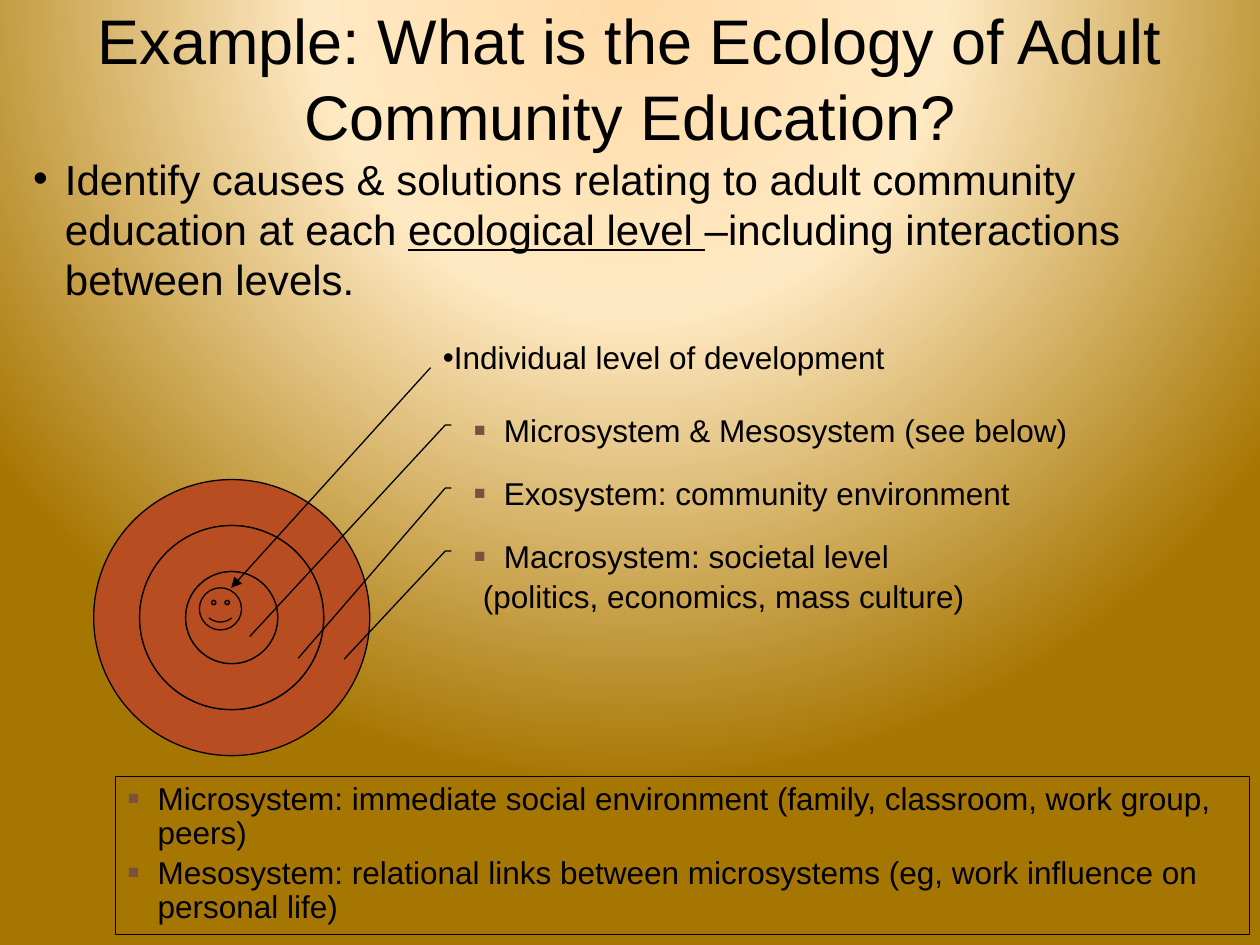
from dataclasses import dataclass

from pptx import Presentation
from pptx import util as u
from pptx.dml.color import RGBColor
from pptx.enum import shapes, text
from pptx.oxml import parse_xml
from pptx.oxml.ns import nsdecls, qn

Cm, Pt = u.Cm, u.Pt
SHAPE = shapes.MSO_SHAPE


@dataclass(frozen=True)
class Theme:
    """Colours, type sizes and line width of the slide."""
    font: str = "Arial"
    ink: str = "000000"
    ring: str = "B74D21"
    bullet: str = "785140"
    glow: tuple = ((0, "FFDBA9"), (40, "FFE9C2"), (100, "A67602"))
    title: int = 36
    body: int = 24
    label: int = 18
    line: float = 0.75


THEME = Theme()


def paint_background(slide):
    """Fill the background with a circular gradient."""
    stops = "".join(
        f'<a:gs pos="{place * 1000}"><a:srgbClr val="{colour}"/></a:gs>'
        for place, colour in THEME.glow)
    slide.element.cSld.insert(0, parse_xml(
        f'<p:bg {nsdecls("p", "a")}><p:bgPr><a:gradFill rotWithShape="1">'
        f'<a:gsLst>{stops}</a:gsLst><a:path path="circle">'
        '<a:fillToRect l="50000" t="-80000" r="50000" b="180000"/></a:path>'
        '</a:gradFill><a:effectLst/></p:bgPr></p:bg>'))


def add_bullet(paragraph, character, indent, colour=THEME.ink, percent=100):
    """Give a paragraph a bullet with a hanging indent."""
    properties = paragraph._p.get_or_add_pPr()
    properties.set("marL", str(indent))
    properties.set("indent", str(-indent))
    for markup in (f'<a:buClr {nsdecls("a")}><a:srgbClr val="{colour}"/></a:buClr>',
                   f'<a:buSzPct {nsdecls("a")} val="{percent * 1000}"/>',
                   f'<a:buFont {nsdecls("a")} typeface="{THEME.font}"/>',
                   f'<a:buChar {nsdecls("a")} char="{character}"/>'):
        properties.append(parse_xml(markup))


def add_run(paragraph, words, size, underline=None):
    """Add one run in the slide font."""
    run = paragraph.add_run()
    run.text = words
    run.font.name = THEME.font
    run.font.size = Pt(size)
    run.font.color.rgb = RGBColor.from_string(THEME.ink)
    run.font.underline = underline


def add_text_box(slide, left, top, width, height):
    """Add a wrapping text box and return its frame."""
    frame = slide.shapes.add_textbox(Cm(left), Cm(top), Cm(width), Cm(height)).text_frame
    frame.word_wrap = True
    return frame


def add_outline(parent, kind, left, top, width, height, fill=None, adjustments=()):
    """Add a thin-lined preset shape, filled or hollow."""
    shape = parent.shapes.add_shape(kind, Cm(left), Cm(top), Cm(width), Cm(height))
    shape.shadow.inherit = False
    if fill:
        shape.fill.solid()
        shape.fill.fore_color.rgb = RGBColor.from_string(fill)
    else:
        shape.fill.background()
    shape.line.color.rgb = RGBColor.from_string(THEME.ink)
    shape.line.width = Pt(THEME.line)
    for index, value in enumerate(adjustments):
        shape.adjustments[index] = value
    return shape


def write_labels(shape, lines, wrap):
    """Write (words, bulleted) label paragraphs into a shape."""
    frame = shape.text_frame
    frame.word_wrap = wrap
    frame.vertical_anchor = text.MSO_ANCHOR.TOP
    for index, (words, bulleted) in enumerate(lines):
        paragraph = frame.add_paragraph() if index else frame.paragraphs[0]
        paragraph.alignment = text.PP_ALIGN.LEFT
        paragraph.line_spacing = 0.9
        if index:
            paragraph.space_before = Pt(THEME.label * 0.2)
        if bulleted:
            add_bullet(paragraph, "■", Cm(0.6), THEME.bullet, 60)
        add_run(paragraph, words, THEME.label)


def add_ring(group, diameter, hole):
    """Add a ring, or a disc without a hole, on the common centre."""
    left, top = 4.67 - diameter / 2, 12.45 - diameter / 2
    kind = SHAPE.DONUT if hole else SHAPE.OVAL
    adjustments = [(1 - hole / diameter) / 2] if hole else []
    add_outline(group, kind, left, top, diameter, diameter, THEME.ring, adjustments)


def add_callout(group, top, reach, lines):
    """Add a borderless callout whose leader ends at reach (down, across)."""
    shape = add_outline(group, SHAPE.LINE_CALLOUT_2_NO_BORDER, 9.31, top, 1.48, 1.25,
                        adjustments=(0.256, -0.142, 0.256, -0.226, *reach))
    write_labels(shape, lines, False)


def add_arrow(slide, start, end):
    """Add a straight line with an arrowhead at its end."""
    connector = slide.shapes.add_connector(
        shapes.MSO_CONNECTOR.STRAIGHT, *(Cm(value) for value in (*start, *end)))
    connector.line.color.rgb = RGBColor.from_string(THEME.ink)
    connector.line.width = Pt(THEME.line)
    connector.line._get_or_add_ln().append(
        parse_xml(f'<a:tailEnd {nsdecls("a")} type="triangle"/>'))
    connector._element.find(qn("p:spPr")).append(
        parse_xml(f'<a:effectLst {nsdecls("a")}/>'))


def add_title(slide):
    """Add the centred heading."""
    frame = add_text_box(slide, 0.42, 0.38, 24.56, 2.36)
    frame.vertical_anchor = text.MSO_ANCHOR.MIDDLE
    frame.paragraphs[0].alignment = text.PP_ALIGN.CENTER
    add_run(frame.paragraphs[0],
            "Example: What is the Ecology of Adult Community Education?", THEME.title)


def add_individual_label(slide):
    """Add the label of the innermost level."""
    paragraph = add_text_box(slide, 8.68, 6.77, 14.6, 1.27).paragraphs[0]
    paragraph.line_spacing = 0.9
    paragraph.space_after = Pt(20)
    add_bullet(paragraph, "•", 0)
    add_run(paragraph, "Individual level of development", THEME.label)


def add_task(slide):
    """Add the task statement with its underlined key term."""
    paragraph = add_text_box(slide, 0.42, 2.96, 24.56, 4.02).paragraphs[0]
    add_bullet(paragraph, "•", Cm(0.64))
    for words, underline in (
            ("Identify causes & solutions relating to adult community education at each ", None),
            ("ecological level ", True),
            ("–including interactions between levels.", None)):
        add_run(paragraph, words, THEME.body, underline)


def add_levels(slide):
    """Add the nested rings, each with its callout."""
    group = slide.shapes.add_group_shape()
    levels = (
        ((2, -1.603), [("Macrosystem: societal level", True),
                       (" (politics, economics, mass culture)", False)]),
        ((3, -2.228), [("Exosystem: community environment", True)]),
        ((3.667, -2.889), [("Microsystem & Mesosystem (see below)", True)]),
    )
    step = 1.855
    for index, (reach, lines) in enumerate(levels):
        size = 3 - index
        add_ring(group, size * step, (size - 1) * step)
        add_callout(group, 10.79 - index * 1.27, reach, lines)


def add_definitions(slide):
    """Add the framed definitions at the foot of the slide."""
    box = add_outline(slide, SHAPE.RECTANGLE, 2.33, 15.66, 22.86, 3.18)
    write_labels(box, [
        ("Microsystem: immediate social environment (family, classroom, work group, peers)", True),
        ("Mesosystem: relational links between microsystems (eg, work influence on personal life)",
         True)], True)
    box.text_frame.auto_size = text.MSO_AUTO_SIZE.SHAPE_TO_FIT_TEXT


def main():
    """Build and save the slide."""
    presentation = Presentation()
    presentation.slide_width, presentation.slide_height = Cm(25.4), Cm(19.05)
    slide = presentation.slides.add_slide(presentation.slide_layouts[6])
    paint_background(slide)
    add_title(slide)
    add_individual_label(slide)
    add_levels(slide)
    add_arrow(slide, (8.68, 7.41), (4.66, 11.85))
    add_definitions(slide)
    add_outline(slide, SHAPE.SMILEY_FACE, 4.02, 11.85, 0.85, 0.85, THEME.ring, [0.047])
    add_task(slide)
    presentation.save("out.pptx")


if __name__ == "__main__":
    main()
